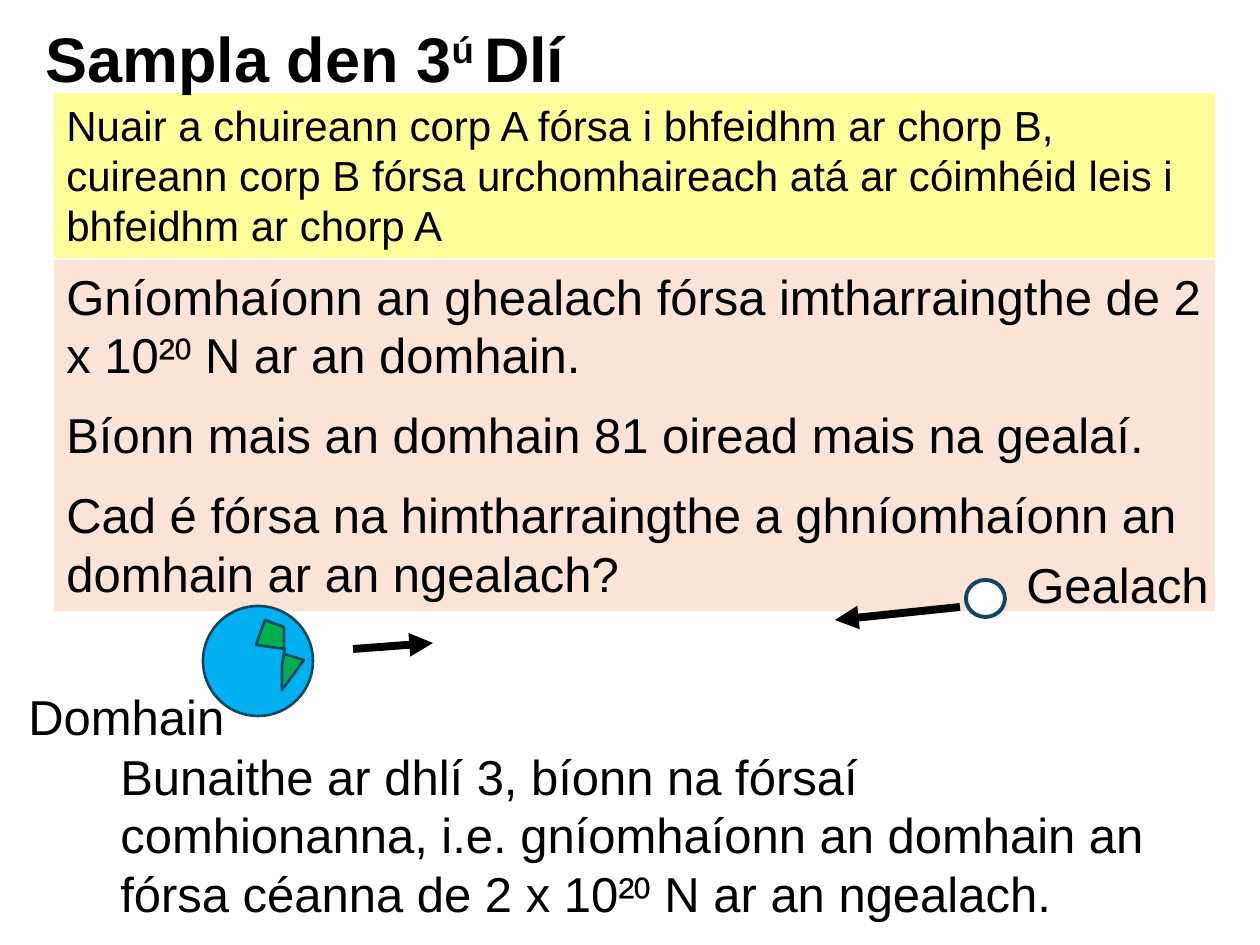
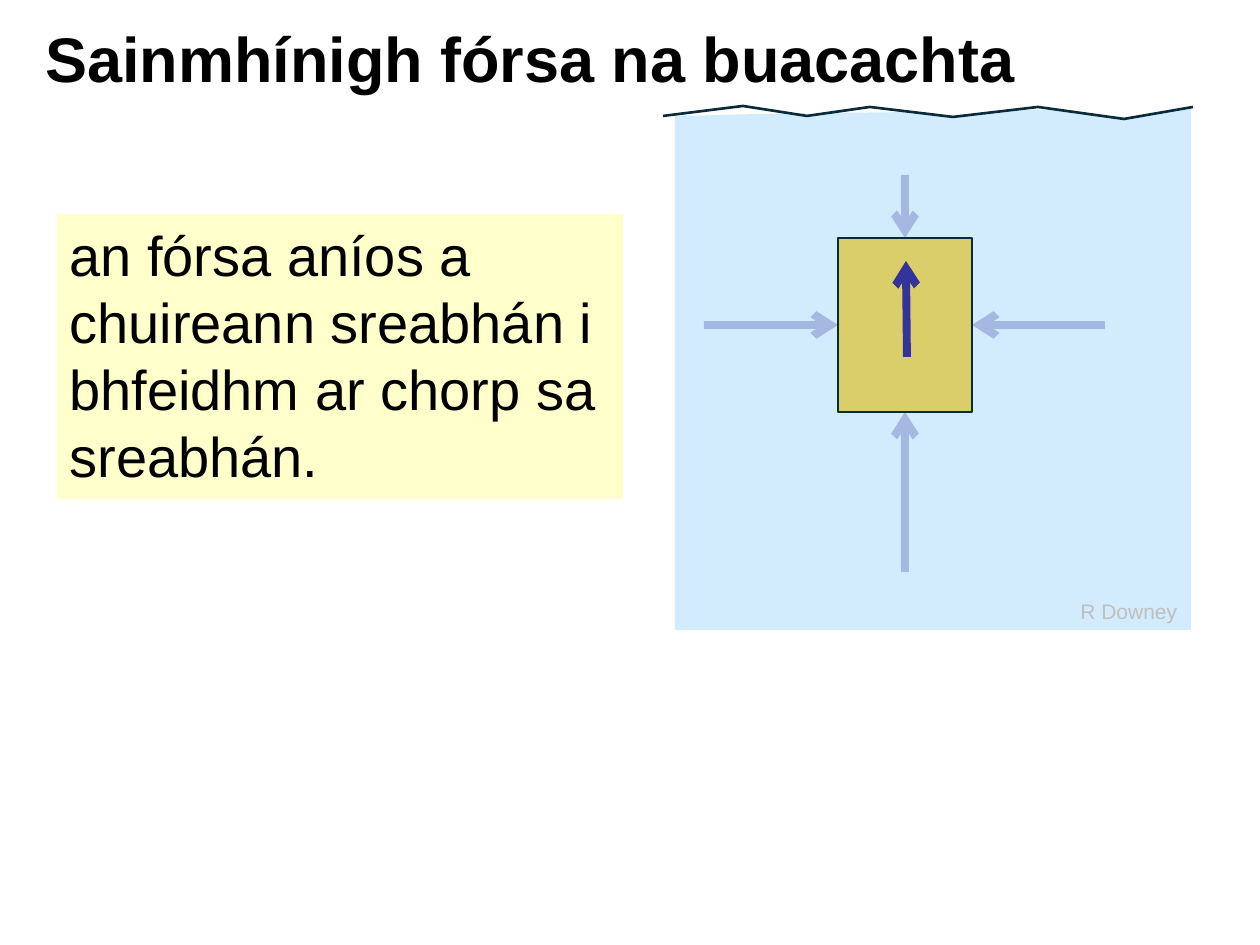
from pptx import Presentation
from pptx.dml.color import RGBColor
from pptx.enum.shapes import MSO_CONNECTOR, MSO_SHAPE
from pptx.enum.text import MSO_ANCHOR, PP_ALIGN
from pptx.oxml.ns import qn
from pptx.util import Pt
from lxml import etree

RECT, OVAL, STRAIGHT = MSO_SHAPE.RECTANGLE, MSO_SHAPE.OVAL, MSO_CONNECTOR.STRAIGHT
LEFT, TOP, MIDDLE = PP_ALIGN.LEFT, MSO_ANCHOR.TOP, MSO_ANCHOR.MIDDLE

PX = 914400 / 126
FONT = "Arial"
COLORS = {
    "text": "000000", "credit": "BFBFBF", "law": "FFFF99", "question": "FBE3D6",
    "definition": "FFFFCC", "earth": "00B0F0", "land": "00B050", "moon": "FFFFFF",
    "outline": "104760", "water": "D2ECFD", "block": "D9CE69",
    "surface": "092A39", "force": "333399",
}

# Content: each paragraph is a list of runs, "^" marks a superscript run
TITLE_BOX = (33, 21, 1202, 82)
LAW_TITLE = [["Sampla den 3", "^ú ", "Dlí"]]
BUOYANCY_TITLE = [["Sainmhínigh fórsa na buacachta"]]
LAW = [["Nuair a chuireann corp A fórsa i bhfeidhm ar chorp B, cuireann corp B fórsa "
        "urchomhaireach atá ar cóimhéid leis i bhfeidhm ar chorp A"]]
QUESTION = [
    ["Gníomhaíonn an ghealach fórsa imtharraingthe de 2 x 10²⁰ N ar an domhain."],
    ["Bíonn mais an domhain 81 oiread mais na gealaí."],
    ["Cad é fórsa na himtharraingthe a ghníomhaíonn an domhain ar an ngealach?"],
]
ANSWER = [["Bunaithe ar dhlí 3, bíonn na fórsaí comhionanna, i.e. gníomhaíonn an "
           "domhain an fórsa céanna de 2 x 10²⁰ N ar an ngealach."]]
BODY_LABELS = [("Domhain", (16, 680, 224, 72)), ("Gealach", (1014, 548, 210, 72))]
DEFINITION = [["an fórsa aníos a chuireann sreabhán i bhfeidhm ar chorp sa sreabhán."]]
CREDIT = [["R Downey"]]

# Drawing data
LAND = [(265, 620), (256, 645), (285, 649), (282, 665), (282, 690),
        (304, 660), (284, 654), (284, 627)]
GRAVITY_ARROWS = [((353, 649), (433, 643)), ((960, 607), (835, 620))]
WATER = [(1191, 108), (1191, 630), (675, 630), (675, 116), (803, 113), (813, 116),
         (828, 113), (916, 112), (959, 117), (1018, 110), (1062, 110), (1130, 118)]
SURFACE = [(663, 116), (743, 106), (807, 116), (870, 107), (953, 117),
           (1038, 107), (1124, 119), (1193, 107)]
BLOCK = (838, 238, 134, 174)
PRESSURE_LENGTHS = {0: 63, 1: 134, 2: 160, 3: 133}  # block side: arrow length
BUOYANCY_ARROW = ((907, 357), (906, 261))


def emu(*lengths):
    return [round(length * PX) for length in lengths]


def color(name):
    return RGBColor.from_string(COLORS[name])


def style(shape, fill=None, line=None, width=1.5):
    shape.shadow.inherit = False
    if fill:
        shape.fill.solid()
        shape.fill.fore_color.rgb = color(fill)
    else:
        shape.fill.background()
    if line:
        shape.line.color.rgb = color(line)
        shape.line.width = Pt(width)
    else:
        shape.line.fill.background()
    return shape


def add_shape(slide, preset, box, **look):
    return style(slide.shapes.add_shape(preset, *emu(*box)), **look)


def add_outline(slide, points, close=True, **look):
    builder = slide.shapes.build_freeform(*points[0], scale=PX)
    builder.add_line_segments(points[1:], close=close)
    return style(builder.convert_to_shape(), **look)


def add_text(slide, paragraphs, box, size=28, fill=None, ink="text", bold=False,
             wrap=True, after=0, spacing=None, anchor=TOP):
    if fill:
        holder = add_shape(slide, RECT, box, fill=fill)
    else:
        holder = slide.shapes.add_textbox(*emu(*box))
    frame = holder.text_frame
    frame.word_wrap = wrap
    frame.vertical_anchor = anchor
    for index, runs in enumerate(paragraphs):
        paragraph = frame.paragraphs[0] if index == 0 else frame.add_paragraph()
        paragraph.alignment = LEFT
        paragraph.space_after = Pt(after)
        if spacing:
            paragraph.line_spacing = spacing
        for words in runs:
            run = paragraph.add_run()
            run.text = words.lstrip("^")
            run.font.name, run.font.size, run.font.bold = FONT, Pt(size), bold
            run.font.color.rgb = color(ink)
            if words.startswith("^"):
                run._r.get_or_add_rPr().set("baseline", "30000")


def add_title(slide, title):
    add_text(slide, title, TITLE_BOX, size=36, bold=True, spacing=0.9, anchor=MIDDLE)


def add_arrow(slide, start, end, ink, head, opacity=None):
    arrow = slide.shapes.add_connector(STRAIGHT, *emu(*start, *end))
    arrow.line.color.rgb = color(ink)
    arrow.line.width = Pt(4.5)
    outline = arrow.line._get_or_add_ln()
    if opacity:
        tint = outline.find(".//" + qn("a:srgbClr"))
        etree.SubElement(tint, qn("a:alpha"), val=str(opacity * 1000))
    etree.SubElement(outline, qn("a:tailEnd"), type=head)
    etree.SubElement(arrow._element.spPr, qn("a:effectLst"))
    return arrow


def build_third_law(slide):
    add_text(slide, QUESTION, (54, 260, 1161, 351), fill="question", after=12)
    add_text(slide, ANSWER, (108, 740, 1052, 190))

    # Earth, moon and their mutual pull
    add_shape(slide, OVAL, (203, 606, 110, 110), fill="earth", line="outline")
    add_shape(slide, OVAL, (966, 580, 39, 37), fill="moon", line="outline", width=2.25)
    add_outline(slide, LAND, fill="land", line="outline")
    for start, end in GRAVITY_ARROWS:
        add_arrow(slide, start, end, "text", "triangle")

    add_text(slide, LAW, (54, 93, 1161, 165), size=24, fill="law")
    for label, box in BODY_LABELS:
        add_text(slide, [[label]], box, wrap=False, after=12)
    add_title(slide, LAW_TITLE)


def build_buoyancy(slide):
    add_text(slide, DEFINITION, (57, 214, 566, 285), size=32, fill="definition")
    add_outline(slide, WATER, fill="water")
    block = add_shape(slide, RECT, BLOCK, fill="block", line="surface")

    # Pressure on the middle of each side of the block
    left, top, width, height = BLOCK
    center_x, center_y = left + width // 2, top + height // 2
    sides = [(center_x, top, 0, -1), (left, center_y, -1, 0),
             (center_x, top + height, 0, 1), (left + width, center_y, 1, 0)]
    for side, length in PRESSURE_LENGTHS.items():
        x, y, out_x, out_y = sides[side]
        start = (x + out_x * length, y + out_y * length)
        pressure = add_arrow(slide, start, (x, y), "force", "arrow", opacity=27)
        pressure.end_connect(block, side)

    add_outline(slide, SURFACE, close=False, line="surface")
    add_arrow(slide, *BUOYANCY_ARROW, "force", "arrow")
    add_text(slide, CREDIT, (1068, 592, 124, 38), size=12, ink="credit", wrap=False)
    add_title(slide, BUOYANCY_TITLE)


def main():
    deck = Presentation()
    deck.slide_width, deck.slide_height = emu(1260, 945)
    for build in (build_third_law, build_buoyancy):
        build(deck.slides.add_slide(deck.slide_layouts[6]))
    deck.save("out.pptx")


if __name__ == "__main__":
    main()
